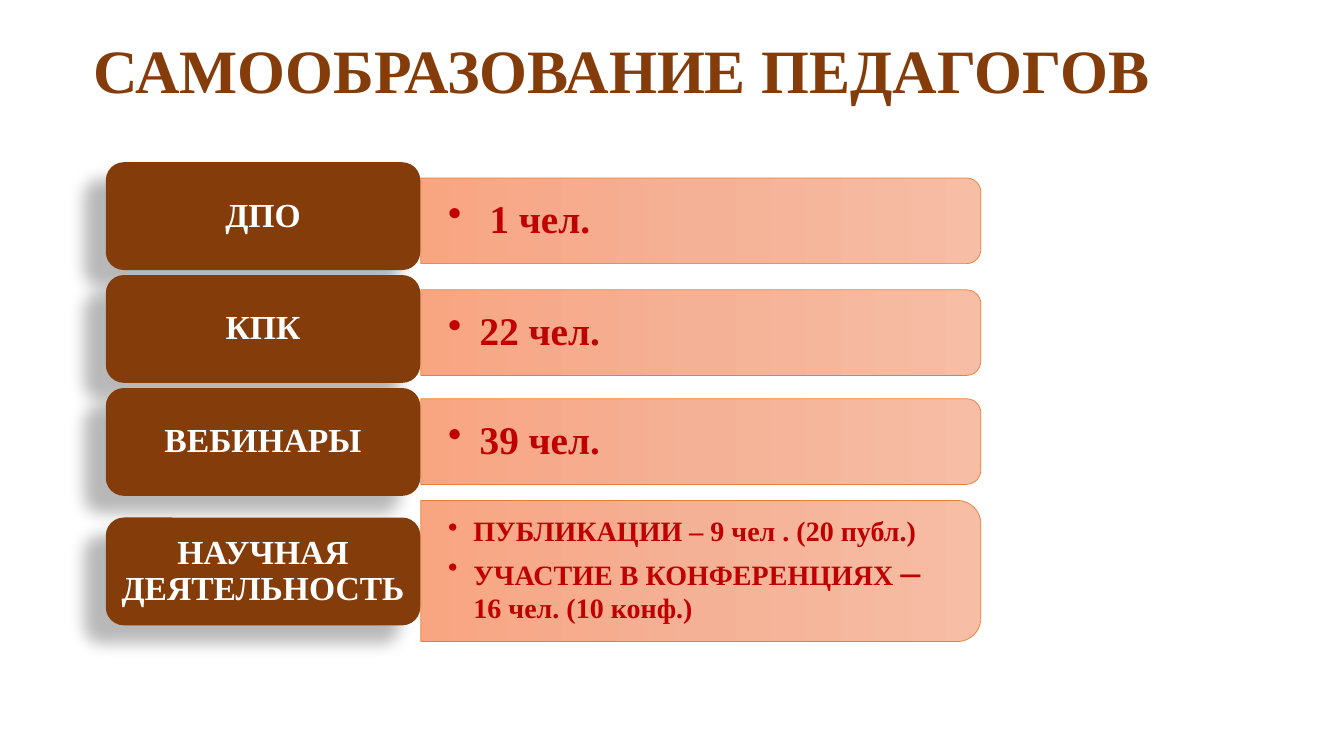
from lxml import etree
from pptx import Presentation
from pptx.dml.color import RGBColor
from pptx.enum.shapes import MSO_SHAPE as SHAPE
from pptx.enum.text import MSO_ANCHOR as ANCHOR, PP_ALIGN as ALIGN
from pptx.oxml import parse_xml
from pptx.oxml.ns import nsdecls, qn
from pptx.util import Pt

COLORS = {
    "brown": "843C0B", "red": "C00000", "white": "FFFFFF", "black": "000000",
    "edge": "ED7D31", "light": "F7BDA5", "middle": "F5B196", "deep": "F8A582",
}
FONT = "Times New Roman"
LABEL_LEFT, LABEL_W, LABEL_H = 75.6, 224.6, 77
BAR_LEFT, BAR_W = 300.6, 400

# label, label top, bar middle, bar height, hanging indent, bullets of (text, size) runs
ROWS = [
    ("ДПО", 115.9, 157.7, 61.2, 22.5, [[(" 1 чел.", 28)]]),
    ("КПК", 196.5, 237.6, 61.2, 22.5, [[("22 чел.", 28)]]),
    ("ВЕБИНАРЫ", 277.2, 315.4, 61.2, 22.5, [[("39 чел.", 28)]]),
    ("НАУЧНАЯ ДЕЯТЕЛЬНОСТЬ", 369.7, 407.9, 100.8, 18, [
        [("ПУБЛИКАЦИИ – 9 чел . (20 публ.)", 20)],
        [("УЧАСТИЕ В КОНФЕРЕНЦИЯХ ", 20), ("– ", 28), ("16 чел. (10 конф.)", 20)],
    ]),
]


def rgb(name):
    return RGBColor.from_string(COLORS[name])


def write(tf, paragraphs, *, color, align=ALIGN.LEFT, indent=0, margins=(7.2, 3.6)):
    """Fill a frame with paragraphs of (text, size) runs; an indent adds bullets."""
    tf.word_wrap = True
    tf.vertical_anchor = ANCHOR.MIDDLE
    tf.margin_left = tf.margin_right = Pt(margins[0])
    tf.margin_top = tf.margin_bottom = Pt(margins[1])
    for i, runs in enumerate(paragraphs):
        p = tf.add_paragraph() if i else tf.paragraphs[0]
        p.alignment = align
        p.line_spacing = 0.9
        if indent:
            p.level = 1
            p.space_after = Pt(3)
            pPr = p._p.get_or_add_pPr()
            pPr.set("marL", str(Pt(indent)))
            pPr.set("indent", str(-Pt(indent)))
            etree.SubElement(pPr, qn("a:buChar")).set("char", "•")
        for text, size in runs:
            r = p.add_run()
            r.text = text
            r.font.name = FONT
            r.font.size = Pt(size)
            r.font.bold = True
            r.font.color.rgb = rgb(color)


def add_text(slide, left, top, width, height, paragraphs, **style):
    box = slide.shapes.add_textbox(Pt(left), Pt(top), Pt(width), Pt(height))
    write(box.text_frame, paragraphs, **style)


def add_bar(slide, middle, height):
    """Draw a bar as an upright shape turned a quarter, so its right end is rounded."""
    sp = slide.shapes.add_shape(
        SHAPE.ROUND_2_SAME_RECTANGLE,
        Pt(BAR_LEFT + (BAR_W - height) / 2), Pt(middle - BAR_W / 2),
        Pt(height), Pt(BAR_W))
    sp.rotation = 90
    sp.shadow.inherit = False
    sp.line.color.rgb = rgb("edge")
    sp.line.width = Pt(0.5)
    stops = "".join(
        f'<a:gs pos="{pos}"><a:srgbClr val="{COLORS[name]}"/></a:gs>'
        for pos, name in ((0, "light"), (50000, "middle"), (100000, "deep")))
    sp._element.spPr.find(qn("a:prstGeom")).addnext(parse_xml(
        f'<a:gradFill {nsdecls("a")} rotWithShape="1"><a:gsLst>{stops}</a:gsLst>'
        '<a:lin ang="5400000" scaled="0"/></a:gradFill>'))


def add_label(slide, text, top):
    sp = slide.shapes.add_shape(
        SHAPE.ROUNDED_RECTANGLE, Pt(LABEL_LEFT), Pt(top), Pt(LABEL_W), Pt(LABEL_H))
    sp.fill.solid()
    sp.fill.fore_color.rgb = rgb("brown")
    sp.line.fill.background()
    sp.shadow.inherit = False
    sp._element.spPr.find(qn("a:effectLst")).append(parse_xml(
        f'<a:outerShdw {nsdecls("a")} blurRad="{Pt(11.8)}" dist="{Pt(19.7)}" '
        f'dir="{141 * 60000}" rotWithShape="0"><a:srgbClr val="{COLORS["black"]}">'
        '<a:alpha val="28000"/></a:srgbClr></a:outerShdw>'))
    write(sp.text_frame, [[(text, 24)]], color="white", align=ALIGN.CENTER)


def main():
    prs = Presentation()
    prs.slide_width, prs.slide_height = Pt(960), Pt(540)
    slide = prs.slides.add_slide(prs.slide_layouts[6])
    add_text(slide, 60, 0, 828, 104.4, [[("САМООБРАЗОВАНИЕ ПЕДАГОГОВ", 44)]],
             color="brown")
    for label, top, middle, height, indent, bullets in ROWS:
        add_bar(slide, middle, height)
        add_text(slide, BAR_LEFT, middle - height / 2, BAR_W - 4, height, bullets,
                 color="red", indent=indent, margins=(19.6, 10))
        add_label(slide, label, top)
    prs.save("out.pptx")


if __name__ == "__main__":
    main()
